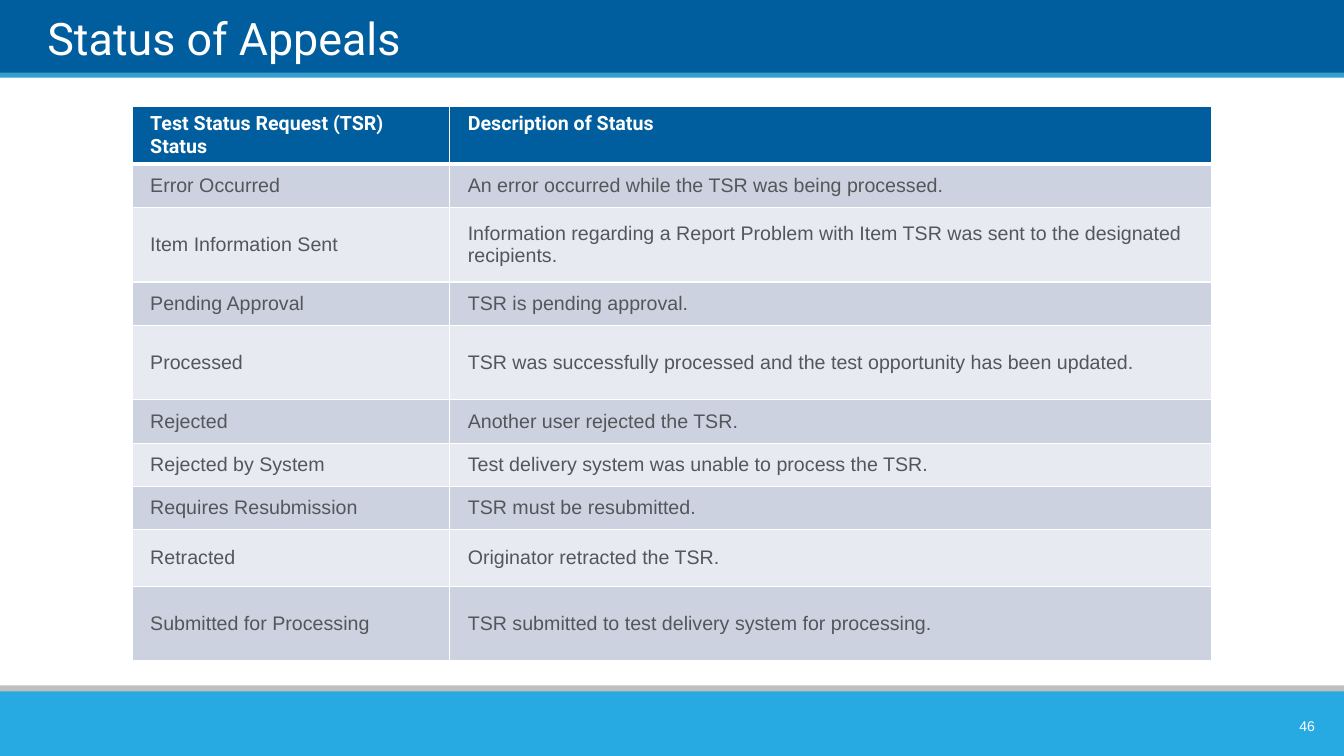
from dataclasses import dataclass
from lxml.etree import SubElement
from pptx import Presentation
from pptx.dml.color import RGBColor
from pptx.enum.shapes import MSO_SHAPE
from pptx.enum.text import MSO_ANCHOR, PP_ALIGN
from pptx.oxml.ns import qn
from pptx.util import Inches, Pt


@dataclass(frozen=True)
class Theme:
    navy: str = "005E9E"
    sky: str = "35A0CE"
    grey: str = "BFBFBF"
    blue: str = "27AAE1"
    white: str = "FFFFFF"
    ink: str = "53565A"
    bands: tuple = ("CCD2DF", "E7EAF0")
    head: str = "Roboto"
    body: str = "Arial"
    title: int = 32
    cell: int = 14
    note: int = 10


class Deck:
    def __init__(self, theme):
        self.theme = theme
        self.show = Presentation()
        self.show.slide_width = Inches(13.33)
        self.show.slide_height = Inches(7.5)
        self.slide = self.show.slides.add_slide(self.show.slide_layouts[6])

    def bar(self, top, height, color):
        bar = self.slide.shapes.add_shape(
            MSO_SHAPE.RECTANGLE, 0, Inches(top), self.show.slide_width, Inches(height))
        bar.shadow.inherit = False
        bar.fill.solid()
        bar.fill.fore_color.rgb = RGBColor.from_string(color)
        bar.line.fill.background()

    def put(self, frame, text, size, font, color, bold=False):
        para = frame.paragraphs[0]
        run = para.add_run()
        run.text = text
        run.font.size = Pt(size)
        run.font.name = font
        run.font.bold = bold
        run.font.color.rgb = RGBColor.from_string(color)
        return para

    def label(self, box, text, size, font, anchor, align, inset):
        frame = self.slide.shapes.add_textbox(*map(Inches, box)).text_frame
        frame.word_wrap = True
        frame.vertical_anchor = anchor
        if not inset:
            frame.margin_left = frame.margin_right = 0
            frame.margin_top = frame.margin_bottom = 0
        self.put(frame, text, size, font, self.theme.white).alignment = align

    def edges(self, cell, top, bottom):
        props = cell._tc.get_or_add_tcPr()
        for side, width in (("L", 1), ("R", 1), ("T", top), ("B", bottom)):
            line = SubElement(props, qn(f"a:ln{side}"), w=str(Pt(width)))
            fill = SubElement(line, qn("a:solidFill"))
            SubElement(fill, qn("a:srgbClr"), val=self.theme.white)

    def table(self, left, top, widths, heights, rows):
        look = self.theme
        grid = self.slide.shapes.add_table(
            len(rows), len(widths), Inches(left), Inches(top),
            Inches(sum(widths)), Inches(sum(heights))).table
        grid.horz_banding = False
        for col, width in zip(grid.columns, widths):
            col.width = Inches(width)
        for i, (row, height, texts) in enumerate(zip(grid.rows, heights, rows)):
            row.height = Inches(height)
            head = i == 0
            for cell, text in zip(row.cells, texts):
                # Borders come before the fill in a cell's properties
                self.edges(cell, 3 if i == 1 else 1, 3 if head else 1)
                cell.fill.solid()
                cell.fill.fore_color.rgb = RGBColor.from_string(
                    look.navy if head else look.bands[(i - 1) % 2])
                cell.vertical_anchor = MSO_ANCHOR.TOP if head else MSO_ANCHOR.MIDDLE
                para = self.put(
                    cell.text_frame, text, look.cell,
                    look.head if head else look.body,
                    look.white if head else look.ink, head)
                para.space_after = Pt(4)
                para._p.get_or_add_pPr().set("marL", str(Inches(0.08)))


ROWS = [
    ("Test Status Request (TSR) Status", "Description of Status"),
    ("Error Occurred", "An error occurred while the TSR was being processed."),
    ("Item Information Sent",
     "Information regarding a Report Problem with Item TSR was sent to the designated recipients."),
    ("Pending Approval", "TSR is pending approval."),
    ("Processed", "TSR was successfully processed and the test opportunity has been updated."),
    ("Rejected", "Another user rejected the TSR."),
    ("Rejected by System", "Test delivery system was unable to process the TSR."),
    ("Requires Resubmission", "TSR must be resubmitted."),
    ("Retracted", "Originator retracted the TSR."),
    ("Submitted for Processing", "TSR submitted to test delivery system for processing."),
]
LOW, MID, TALL = 0.43, 0.56, 0.74
HEIGHTS = [LOW, LOW, TALL, LOW, TALL, LOW, LOW, LOW, MID, TALL]


def main():
    theme = Theme()
    deck = Deck(theme)

    # Header and footer bars
    deck.bar(-0.01, 0.75, theme.navy)
    deck.bar(0.72, 0.05, theme.sky)
    deck.bar(6.8, 0.14, theme.grey)
    deck.bar(6.86, 0.64, theme.blue)

    # Title
    deck.label((0.47, 0.07, 12.05, 0.57), "Status of Appeals", theme.title,
               theme.head, MSO_ANCHOR.BOTTOM, PP_ALIGN.LEFT, False)

    # Status table
    deck.table(1.31, 1.06, (3.15, 7.56), HEIGHTS, ROWS)

    # Page number
    deck.label((12.37, 7.05, 0.77, 0.3), "46", theme.note,
               theme.body, MSO_ANCHOR.MIDDLE, PP_ALIGN.RIGHT, True)

    deck.show.save("out.pptx")


if __name__ == "__main__":
    main()
